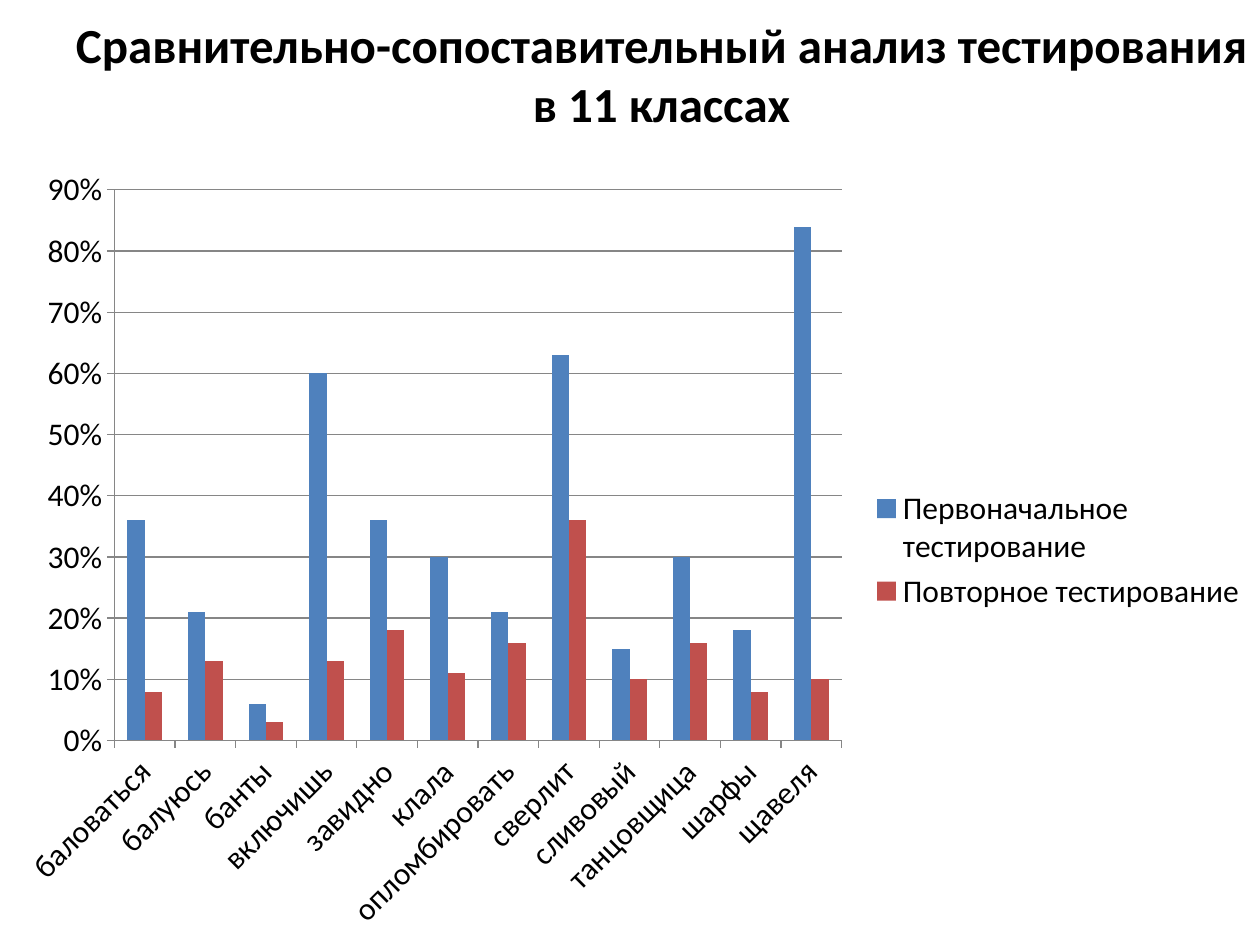
from pptx import Presentation, util as u
from pptx.chart.data import CategoryChartData
from pptx.dml.color import RGBColor
from pptx.enum import chart as charts, text as texts

BLACK = RGBColor(0x00, 0x00, 0x00)
GRAY = RGBColor(0x86, 0x86, 0x86)
BLUE = RGBColor(0x4F, 0x81, 0xBD)
RED = RGBColor(0xC0, 0x50, 0x4D)
FONT = "Calibri"

presentation = Presentation()
presentation.slide_width = u.Inches(10)
presentation.slide_height = u.Inches(7.5)
slide = presentation.slides.add_slide(presentation.slide_layouts[6])
width, height = presentation.slide_width, presentation.slide_height
title_height = int(height * 0.156)
chart_top = int(height * 0.164)


def add_text(content, left, top, box_width, box_height, size=18, bold=False, color=BLACK):
    shape = slide.shapes.add_textbox(left, top, box_width, box_height)
    frame = shape.text_frame
    frame.word_wrap = True
    frame.vertical_anchor = texts.MSO_ANCHOR.MIDDLE
    paragraph = frame.paragraphs[0]
    paragraph.alignment = texts.PP_ALIGN.CENTER
    run = paragraph.add_run()
    run.text = content
    run.font.name = FONT
    run.font.size = u.Pt(size)
    run.font.bold = bold
    run.font.color.rgb = color
    return shape


add_text("Сравнительно-сопоставительный анализ тестирования в 11 классах",
         int(width * 0.05), 0, int(width * 0.95), title_height, size=28, bold=True)

results = [
    ("баловаться", 0.36, 0.08),
    ("балуюсь", 0.21, 0.13),
    ("банты", 0.06, 0.03),
    ("включишь", 0.6, 0.13),
    ("завидно", 0.36, 0.18),
    ("клала", 0.3, 0.11),
    ("опломбировать", 0.21, 0.16),
    ("сверлит", 0.63, 0.36),
    ("сливовый", 0.15, 0.1),
    ("танцовщица", 0.3, 0.16),
    ("шарфы", 0.18, 0.08),
    ("щавеля", 0.84, 0.1),
]
words, first_test, second_test = zip(*results)
data = CategoryChartData(number_format="0%")
data.categories = words
data.add_series("Первоначальное тестирование", first_test)
data.add_series("Повторное тестирование", second_test)
chart = slide.shapes.add_chart(charts.XL_CHART_TYPE.COLUMN_CLUSTERED, 0, chart_top,
                               width, height - chart_top, data).chart

chart.has_title = False
chart.font.name = FONT
chart.font.size = u.Pt(18)
chart.font.color.rgb = BLACK
chart.has_legend = True
chart.legend.position = charts.XL_LEGEND_POSITION.RIGHT
chart.legend.include_in_layout = False

plot = chart.plots[0]
plot.gap_width = 150
plot.overlap = 0
plot.vary_by_categories = False
for series, color in zip(plot.series, (BLUE, RED)):
    series.format.fill.solid()
    series.format.fill.fore_color.rgb = color

value_axis = chart.value_axis
value_axis.minimum_scale = 0
value_axis.maximum_scale = 0.9
value_axis.major_unit = 0.1
value_axis.has_major_gridlines = True
value_axis.tick_labels.number_format = "0%"
value_axis.tick_labels.number_format_is_linked = False
for axis in (chart.category_axis, value_axis):
    axis.major_tick_mark = charts.XL_TICK_MARK.OUTSIDE
    axis.minor_tick_mark = charts.XL_TICK_MARK.NONE
for line in (chart.category_axis.format.line, value_axis.format.line,
             value_axis.major_gridlines.format.line):
    line.color.rgb = GRAY
    line.width = u.Pt(0.75)

presentation.save("out.pptx")
